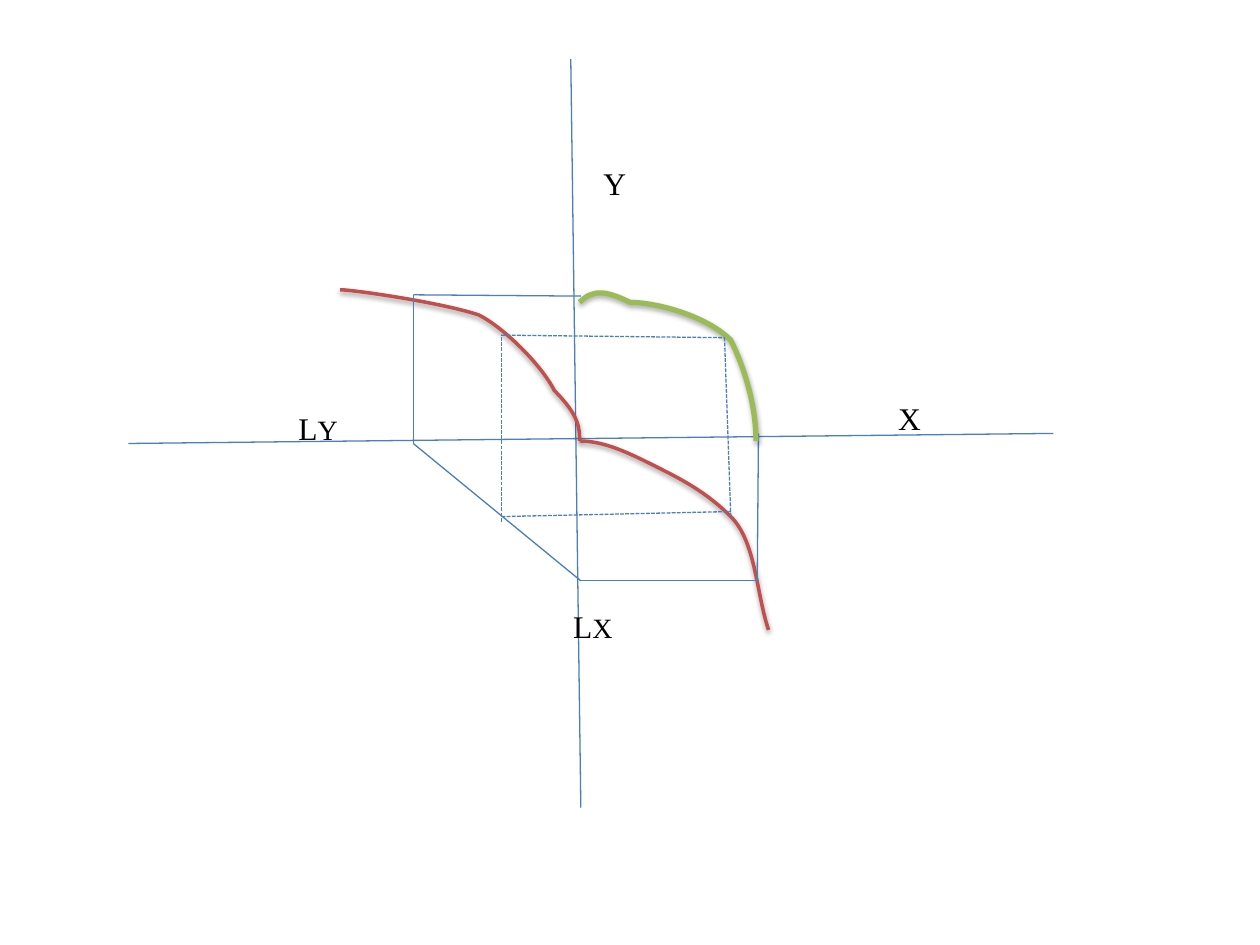
import pptx
import pptx.dml.color
import pptx.enum.dml
import pptx.enum.shapes
import pptx.enum.text
import pptx.oxml
import pptx.oxml.ns
import pptx.util

deck = pptx.Presentation()
deck.slide_width = pptx.util.Inches(10)
deck.slide_height = pptx.util.Inches(7.5)
page = deck.slides.add_slide(deck.slide_layouts[6])

# Grid of 100 columns by 75 rows; every position below is (column, row)
CELL = deck.slide_width / 100
BLUE, RED, GREEN, BLACK = "4B7EBC", "C0504D", "9BBB59", "000000"
qn = pptx.oxml.ns.qn


def color(hex_text):
    return pptx.dml.color.RGBColor.from_string(hex_text)


def add_effects(shape, shadow=""):
    shape._element.spPr.append(pptx.oxml.parse_xml(
        f'<a:effectLst {pptx.oxml.ns.nsdecls("a")}>{shadow}</a:effectLst>'))


# Corners of the construction
labor_y_limit = (32.8, 35.2)
labor_x_limit = (46.1, 46.1)
top_left = (32.8, 23.4)
inner_left, inner_right = (39.8, 26.6), (57.5, 26.8)
origin = (45.8, 34.85)

solid, dashed = None, pptx.enum.dml.MSO_LINE.SQUARE_DOT

# Each curve: colour, width, shadow opacity, shadow distance, start and Bezier points
labor_y_curve = (RED, 2, 38, 20000, [
    origin, (45.7, 33.9), (45.6, 32.8), (44.2, 31.1), (42.9, 29.4), (40.5, 26.3),
    (37.6, 24.9), (34.7, 23.6), (28.3, 23.3), (26.8, 23)])
labor_x_curve = (RED, 2, 38, 20000, [
    origin, (47.7, 35.4), (49.7, 35.9), (51.7, 37), (53.8, 38), (56.4, 38.8),
    (58, 41), (59.5, 43.2), (60.3, 46.6), (61, 50)])
frontier = (GREEN, 3, 35, 23000, [
    (45.6, 23.5), (46.7, 23.4), (47.8, 23.2), (49.8, 23.7), (51.8, 24.3), (55.7, 24.9),
    (57.5, 26.8), (59.2, 28.6), (59.8, 31.6), (60.3, 34.6)])

# Layers from back to front: lines, then the curves that lie over them
layers = [
    # Axes, labour constraint and the two production curves
    (solid, [((45.3, 4.7), (46.1, 64.1)),
             ((10.2, 35.2), (83.6, 34.4)),
             (labor_y_limit, labor_x_limit)],
     [labor_y_curve, labor_x_curve]),
    # Outer projection and the frontier
    (solid, [(labor_y_limit, top_left),
             (labor_x_limit, (60.2, 46.1)),
             (top_left, (46.1, 23.5)),
             ((60.1, 46.1), (60.2, 34.4))],
     [frontier]),
    # Inner projection
    (dashed, [((39.8, 41.4), inner_left),
              ((39.8, 41), (58, 40.6)),
              ((58, 41), inner_right),
              (inner_left, inner_right)],
     []),
]

for dash, lines, curves in layers:
    for start, end in lines:
        line = page.shapes.add_connector(
            pptx.enum.shapes.MSO_CONNECTOR.STRAIGHT,
            *(round(value * CELL) for value in start + end))
        line.line.color.rgb = color(BLUE)
        line.line.width = pptx.util.Pt(0.75)
        if dash:
            line.line.dash_style = dash
        add_effects(line)

    for hue, width, opacity, distance, points in curves:
        builder = page.shapes.build_freeform(*points[0], scale=CELL)
        builder.add_line_segments(points[1:], close=False)
        curve = builder.convert_to_shape()
        # Merge each three straight segments into one cubic Bezier
        segments = list(curve._element.iter(qn("a:lnTo")))
        for index in range(0, len(segments), 3):
            bezier = segments[index]
            bezier.tag = qn("a:cubicBezTo")
            for extra in segments[index + 1:index + 3]:
                bezier.append(extra[0])
                extra.getparent().remove(extra)
        curve.fill.background()
        curve.line.color.rgb = color(hue)
        curve.line.width = pptx.util.Pt(width)
        add_effects(curve, (
            f'<a:outerShdw blurRad="40000" dist="{distance}" dir="5400000" rotWithShape="0">'
            f'<a:srgbClr val="{BLACK}"><a:alpha val="{opacity * 1000}"/></a:srgbClr>'
            '</a:outerShdw>'))

# Axis labels: first letter at 18 pt, second at 16 pt
for text, left, top, width in [("X", 70.3, 31.2, 6.3), ("Y", 46.9, 12.5, 7),
                               ("LY", 22.7, 32, 6.3), ("LX", 44.5, 47.7, 6.3)]:
    box = page.shapes.add_textbox(
        *(round(value * CELL) for value in (left, top, width, 4)))
    box.text_frame.word_wrap = True
    box.text_frame.auto_size = pptx.enum.text.MSO_AUTO_SIZE.SHAPE_TO_FIT_TEXT
    para = box.text_frame.paragraphs[0]
    for letter, size in zip(text, (18, 16)):
        span = para.add_run()
        span.text = letter
        span.font.name = "Times New Roman"
        span.font.size = pptx.util.Pt(size)
        span.font.color.rgb = color(BLACK)

deck.save("out.pptx")
